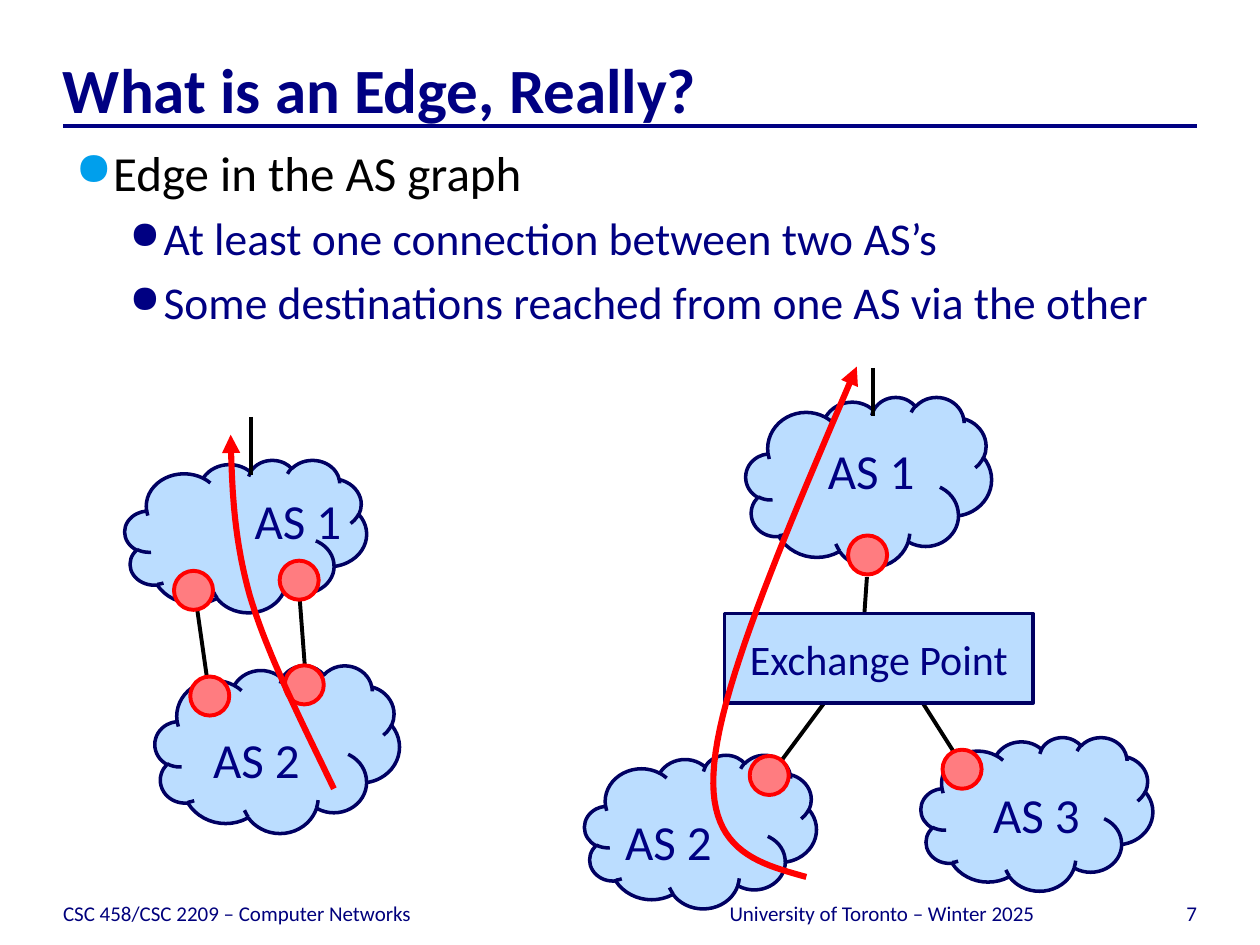
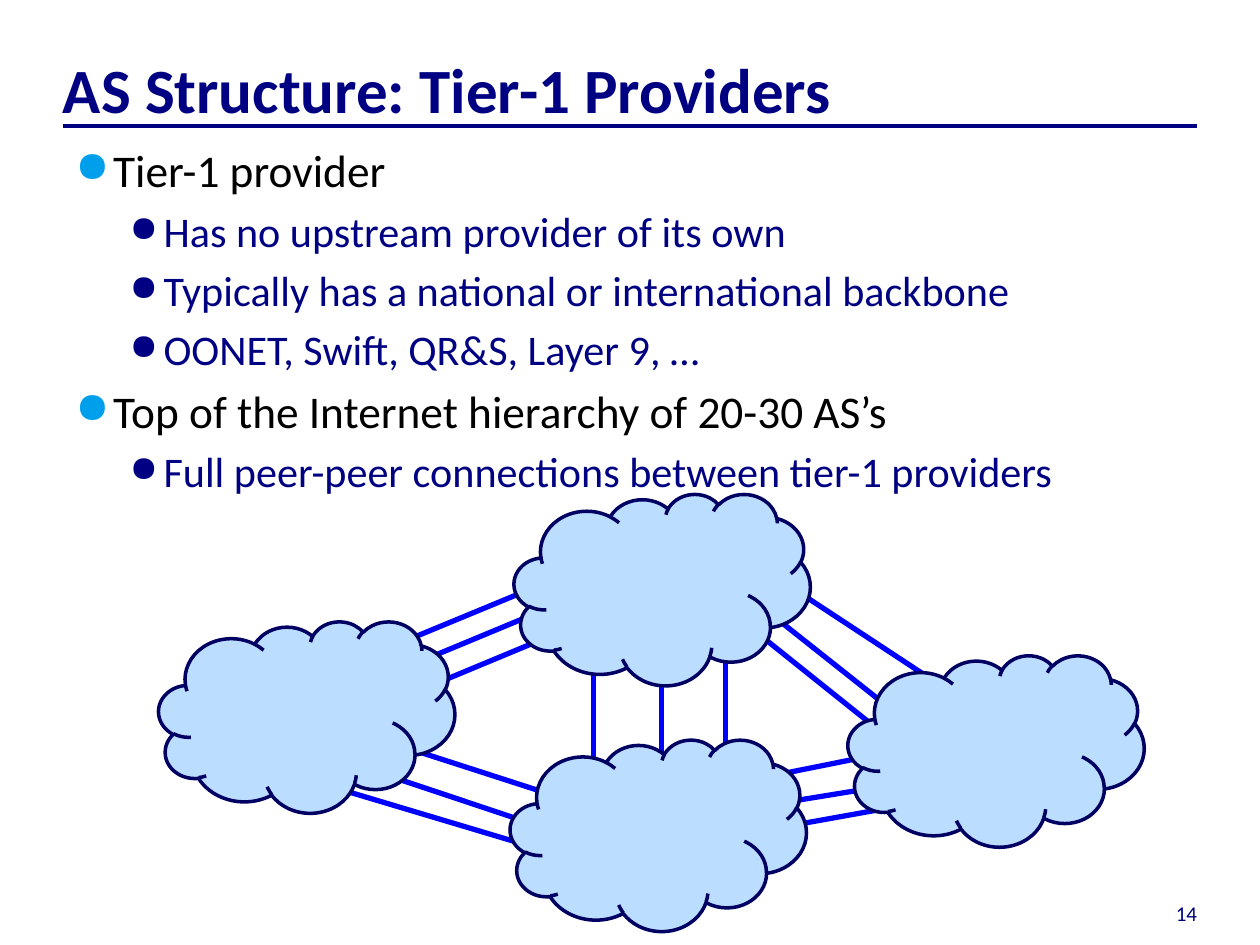
from lxml import etree
from pptx import Presentation
from pptx import util as u
from pptx.dml.color import RGBColor
from pptx.enum import shapes, text
from pptx.oxml import ns

Pt = u.Pt
FONT = "Calibri"
NAVY = RGBColor(0x00, 0x00, 0x82)
FOOTER_NAVY = RGBColor(0x00, 0x00, 0x7C)
OUTLINE = RGBColor(0x00, 0x00, 0x62)
CLOUD_BLUE = RGBColor(0xBB, 0xDD, 0xFF)
BULLET_BLUE = RGBColor(0x00, 0x9F, 0xEC)
LINK_BLUE = RGBColor(0x00, 0x00, 0xFF)
ROUTER_PINK = RGBColor(0xFF, 0x7C, 0x80)
RED = RGBColor(0xFF, 0x00, 0x00)
BLACK = RGBColor(0x00, 0x00, 0x00)

LEFT, WIDTH = 36, 648
ROUTER = 22.3
LABEL = (71.3, 41)
FOOTER_TOP, FOOTER_HEIGHT = 500.4, 28.8
LEVELS = (
    dict(color=BLACK, indent=(21.6, -21.6), bullet=BULLET_BLUE, bullet_size=95),
    dict(color=NAVY, indent=(50.4, -19.4), bullet=NAVY, bullet_size=85),
)


def add_xml(parent, tag, **attributes):
    return etree.SubElement(parent, ns.qn(tag), attributes)


def set_bullet(paragraph, indent, color, percent):
    properties = paragraph._p.get_or_add_pPr()
    properties.set("marL", str(Pt(indent[0])))
    properties.set("indent", str(Pt(indent[1])))
    before = add_xml(properties, "a:spcBef")
    add_xml(before, "a:spcPct", val="20000")
    tint = add_xml(properties, "a:buClr")
    add_xml(tint, "a:srgbClr", val=str(color))
    add_xml(properties, "a:buSzPct", val=str(percent * 1000))
    add_xml(properties, "a:buChar", char="●")


def write(paragraph, words, size=28, color=NAVY, bold=False, align="LEFT"):
    paragraph.alignment = getattr(text.PP_ALIGN, align)
    run = paragraph.add_run()
    run.text = words
    run.font.name = FONT
    run.font.size = Pt(size)
    run.font.color.rgb = color
    run.font.bold = bold


def add_frame(slide, box, insets=(7.2, 3.6, 7.2, 3.6), anchor="TOP", wrap=True):
    frame = slide.shapes.add_textbox(*map(Pt, box)).text_frame
    frame.word_wrap = wrap
    frame.vertical_anchor = getattr(text.MSO_ANCHOR, anchor)
    (frame.margin_left, frame.margin_top,
     frame.margin_right, frame.margin_bottom) = map(Pt, insets)
    return frame


def add_outlined(slide, kind, box, fill=CLOUD_BLUE, line=OUTLINE, weight=2):
    shape = slide.shapes.add_shape(kind, *map(Pt, box))
    shape.shadow.inherit = False
    shape.fill.solid()
    shape.fill.fore_color.rgb = fill
    shape.line.color.rgb = line
    shape.line.width = Pt(weight)
    return shape


def add_link(slide, start, end, color=BLACK, weight=2.25):
    link = slide.shapes.add_connector(
        shapes.MSO_CONNECTOR.STRAIGHT, *map(Pt, (*start, *end)))
    link.line.color.rgb = color
    link.line.width = Pt(weight)
    add_xml(link._element.spPr, "a:effectLst")


def curve_points(points, steps=24):
    for first in range(0, len(points) - 1, 3):
        a, b, c, d = points[first:first + 4]
        for step in range(1, steps + 1):
            t = step / steps
            s = 1 - t
            yield tuple(
                Pt(s**3 * p + 3 * s * s * t * q + 3 * s * t * t * r + t**3 * e)
                for p, q, r, e in zip(a, b, c, d))


def add_route(slide, points):
    builder = slide.shapes.build_freeform(*map(Pt, points[0]))
    builder.add_line_segments(list(curve_points(points)), close=False)
    route = builder.convert_to_shape()
    route.shadow.inherit = False
    route.fill.background()
    route.line.color.rgb = RED
    route.line.width = Pt(3.5)
    add_xml(route.line._get_or_add_ln(), "a:tailEnd", type="triangle")


def add_title(slide, title):
    add_link(slide, (LEFT, 72), (LEFT + WIDTH, 72), color=NAVY)
    frame = add_frame(slide, (LEFT, 24, WIDTH, 48), (0, 3.6, 0, 0), "BOTTOM")
    write(frame.paragraphs[0], title, size=36, bold=True)


def add_body(slide, box, sizes, items):
    frame = add_frame(slide, box)
    for index, (level, words) in enumerate(items):
        paragraph = frame.add_paragraph() if index else frame.paragraphs[0]
        style = LEVELS[level]
        paragraph.level = level
        write(paragraph, words, size=sizes[level], color=style["color"])
        set_bullet(paragraph, style["indent"], style["bullet"], style["bullet_size"])


def add_footer(slide, left, width, words, align="LEFT"):
    box = (left, FOOTER_TOP, width, FOOTER_HEIGHT)
    frame = add_frame(slide, box, (0, 0, 0, 0), "BOTTOM")
    write(frame.paragraphs[0], words, size=12, color=FOOTER_NAVY, align=align)


def add_page_number(slide, number):
    add_footer(slide, 624, 60, str(number), align="RIGHT")


def add_as_diagram(slide, origin, clouds, links, routers, labels, route, exchange=None):
    def at(point):
        return origin[0] + point[0], origin[1] + point[1]

    for corner, size in clouds:
        add_outlined(slide, shapes.MSO_SHAPE.CLOUD, (*at(corner), *size))
    for start, end in links:
        add_link(slide, at(start), at(end))
    for corner in routers:
        add_outlined(slide, shapes.MSO_SHAPE.OVAL, (*at(corner), ROUTER, ROUTER),
                     fill=ROUTER_PINK, line=RED, weight=2.25)
    for corner, name in labels:
        frame = add_frame(slide, (*at(corner), *LABEL), wrap=False)
        write(frame.paragraphs[0], name, align="CENTER")
    if exchange:
        corner, size = exchange
        point = add_outlined(slide, shapes.MSO_SHAPE.RECTANGLE, (*at(corner), *size))
        point.text_frame.vertical_anchor = text.MSO_ANCHOR.MIDDLE
        write(point.text_frame.paragraphs[0], "Exchange Point", size=24, align="CENTER")
    add_route(slide, [at(point) for point in route])


def add_tier1_mesh(slide, origin):
    x, y = origin
    west_north = [(133.9, 87.4, 224.6, 49.9), (139.7, 100.3, 212.4, 70.1),
                  (154.8, 110.4, 227.5, 80.2)]
    north_east = [(345.6, 42.7, 448.6, 110.4), (345.6, 65, 418.3, 122.6),
                  (337, 75.1, 409, 132.7)]
    west_south = [(143.3, 145.7, 236.9, 175.9), (121.7, 157.9, 227.5, 193.2),
                  (100.8, 168, 218.9, 203.3)]
    south_east = [(342.7, 163, 418.3, 147.8), (348.5, 178.1, 424.1, 165.8),
                  (355, 191, 439.2, 175.9)]
    north_south = [(249.1, 155.8, 249.1, 85.2), (288, 152.9, 288, 92.4),
                   (324.7, 147.8, 324.7, 85.2)]
    for peering in (west_north, north_east, west_south, south_east, north_south):
        for x1, y1, x2, y2 in peering:
            add_link(slide, (x + x1, y + y1), (x + x2, y + y2), LINK_BLUE, 3)
    for left, top in ((0.7, 73), (203.8, 0.2), (394.6, 92.4), (201.6, 140.6)):
        add_outlined(slide, shapes.MSO_SHAPE.CLOUD, (x + left, y + top, 169.2, 109.4))


def build_edge_slide(slide):
    add_title(slide, "What is an Edge, Really?")
    add_body(slide, (LEFT, 77.8, WIDTH, 419.8), (28, 26), [
        (0, "Edge in the AS graph"),
        (1, "At least one connection between two AS’s"),
        (1, "Some destinations reached from one AS via the other"),
    ])
    add_footer(slide, LEFT, 348, "CSC 458/CSC 2209 – Computer Networks")
    add_footer(slide, 390, 228, "University of Toronto – Winter 2025", align="CENTER")
    add_page_number(slide, 7)
    add_as_diagram(
        slide, (71, 238),
        clouds=[((17.6, 142.2), (139.7, 95.8)), ((0.3, 24.8), (138.2, 87.1))],
        links=[((104, 153), (99.6, 95.4)), ((47.8, 153), (40.6, 102.6)),
               ((72.3, 0.3), (72.3, 33.4))],
        routers=[(91.7, 142.2), (88.8, 82.4), (28.4, 88.2), (37.7, 148.6)],
        labels=[((63.6, 38.5), "AS 1"), ((39.9, 175.3), "AS 2")],
        route=[(119.8, 212.7), (101.1, 173.8), (81.6, 135.7), (71.6, 101.8),
               (62.2, 68), (61.5, 39.2), (60.8, 10.4)])
    add_as_diagram(
        slide, (334, 209.5),
        clouds=[((0.1, 221.8), (132.5, 87.8)), ((192.3, 211.7), (132.5, 87.8)),
                ((92.2, 17.3), (140.4, 97.2))],
        links=[((110.2, 228.3), (143.4, 183.6)), ((212.5, 222.5), (183.7, 177.1)),
               ((159.9, 141.9), (161.4, 120.3)), ((165, 0.7), (165, 28.1))],
        routers=[(150.6, 96.5), (94.4, 222.5), (204.6, 218.9)],
        labels=[((128.2, 38.9), "AS 1"), ((12.3, 250.6), "AS 2"),
                ((222.6, 235.5), "AS 3")],
        route=[(126.8, 291.6), (98, 283.7), (69.2, 275.8), (74.2, 226.8),
               (78.6, 178.6), (117.4, 89.3), (155.6, 0)],
        exchange=((80, 141.1), (176.4, 51.1)))


def build_tier1_slide(slide):
    add_title(slide, "AS Structure: Tier-1 Providers")
    add_body(slide, (LEFT, 77.8, WIDTH, 203.8), (25.9, 24.1), [
        (0, "Tier-1 provider"),
        (1, "Has no upstream provider of its own"),
        (1, "Typically has a national or international backbone"),
        (1, "OONET, Swift, QR&S, Layer 9, …"),
        (0, "Top of the Internet hierarchy of 20-30 AS’s"),
        (1, "Full peer-peer connections between tier-1 providers"),
    ])
    add_page_number(slide, 14)
    add_tier1_mesh(slide, (90, 282))


def main():
    deck = Presentation()
    deck.slide_width, deck.slide_height = Pt(720), Pt(540)
    for build in (build_edge_slide, build_tier1_slide):
        build(deck.slides.add_slide(deck.slide_layouts[6]))
    deck.save("out.pptx")


if __name__ == "__main__":
    main()
